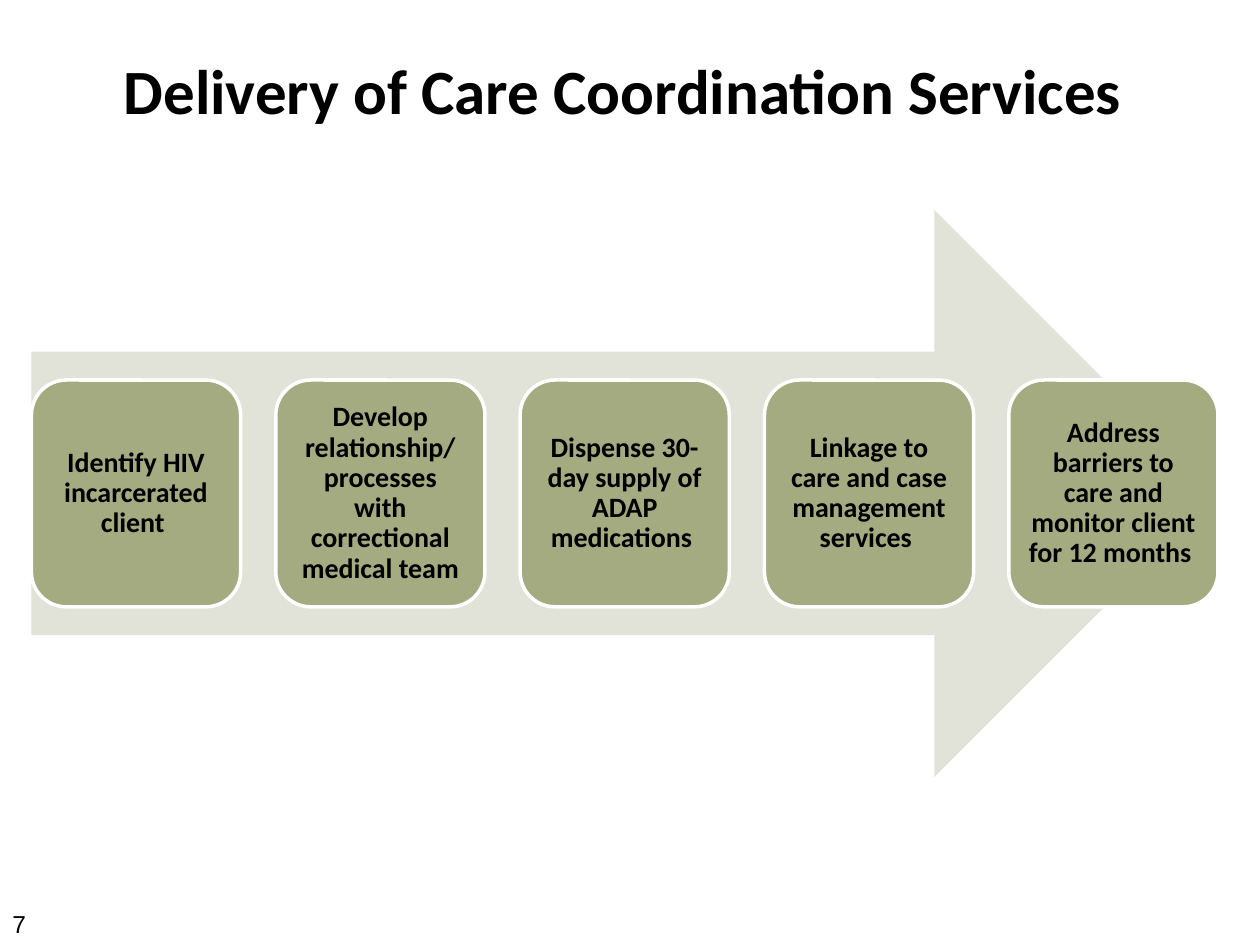
import pptx
import pptx.util
import pptx.dml.color
import pptx.enum.shapes
import pptx.enum.text

Pt = pptx.util.Pt
SHAPE = pptx.enum.shapes.MSO_SHAPE
ALIGN = pptx.enum.text.PP_ALIGN
ANCHOR = pptx.enum.text.MSO_ANCHOR

COLORS = {"text": "000000", "arrow": "E1E2D8", "step": "A5AB81", "edge": "FFFFFF"}

STEPS = [
    ["Identify HIV incarcerated client "],
    ["Develop relationship/", "processes with correctional medical team"],
    ["Dispense 30-day supply of ADAP medications "],
    ["Linkage to care and case management services "],
    ["Address barriers to care and monitor client for 12 months "],
]


def rgb(name):
    return pptx.dml.color.RGBColor.from_string(COLORS[name])


def add_run(p, text, size, font="Calibri", bold=True):
    r = p.add_run()
    r.text = text
    r.font.name, r.font.size, r.font.bold = font, Pt(size), bold
    r.font.color.rgb = rgb("text")


def add_filled(s, kind, box, color):
    sp = s.shapes.add_shape(kind, *map(Pt, box))
    sp.shadow.inherit = False
    sp.fill.solid()
    sp.fill.fore_color.rgb = rgb(color)
    sp.line.fill.background()
    return sp


def place_title(s, box, text):
    sp = s.shapes.title
    sp.left, sp.top, sp.width, sp.height = map(Pt, box)
    tf = sp.text_frame
    tf.vertical_anchor = ANCHOR.MIDDLE
    p = tf.paragraphs[0]
    p.alignment = ALIGN.CENTER
    add_run(p, text, 36)


def add_step(s, box, lines):
    sp = add_filled(s, SHAPE.ROUNDED_RECTANGLE, box, "step")
    sp.line.color.rgb = rgb("edge")
    sp.line.width = Pt(2)
    tf = sp.text_frame
    tf.word_wrap = True
    tf.vertical_anchor = ANCHOR.MIDDLE
    tf.margin_left = tf.margin_right = tf.margin_top = tf.margin_bottom = Pt(5)
    for i, line in enumerate(lines):
        p = tf.add_paragraph() if i else tf.paragraphs[0]
        p.alignment = ALIGN.CENTER
        p.line_spacing = 0.9
        add_run(p, line, 16)


def add_process(s, box, steps):
    """Draw an arrow filling the box, with evenly spaced steps across it."""
    left, top, width, height = box
    add_filled(s, SHAPE.RIGHT_ARROW, box, "arrow")
    step_w, step_h = 119.5, height * 0.4
    pitch = (width - step_w) / (len(steps) - 1)
    step_top = top + (height - step_h) / 2
    for i, lines in enumerate(steps):
        add_step(s, (left + i * pitch, step_top, step_w, step_h), lines)


def add_page_number(s, box, number):
    tf = s.shapes.add_textbox(*map(Pt, box)).text_frame
    tf.word_wrap = True
    add_run(tf.paragraphs[0], number, 14, "Arial", False)


def main():
    prs = pptx.Presentation()
    prs.slide_width, prs.slide_height = Pt(720), Pt(540)
    s = prs.slides.add_slide(prs.slide_layouts[5])
    add_page_number(s, (0, 516, 168, 18), "7")
    add_process(s, (18, 120, 678, 324), STEPS)
    place_title(s, (36, 0, 648, 102), "Delivery of Care Coordination Services ")
    prs.save("out.pptx")


if __name__ == "__main__":
    main()
